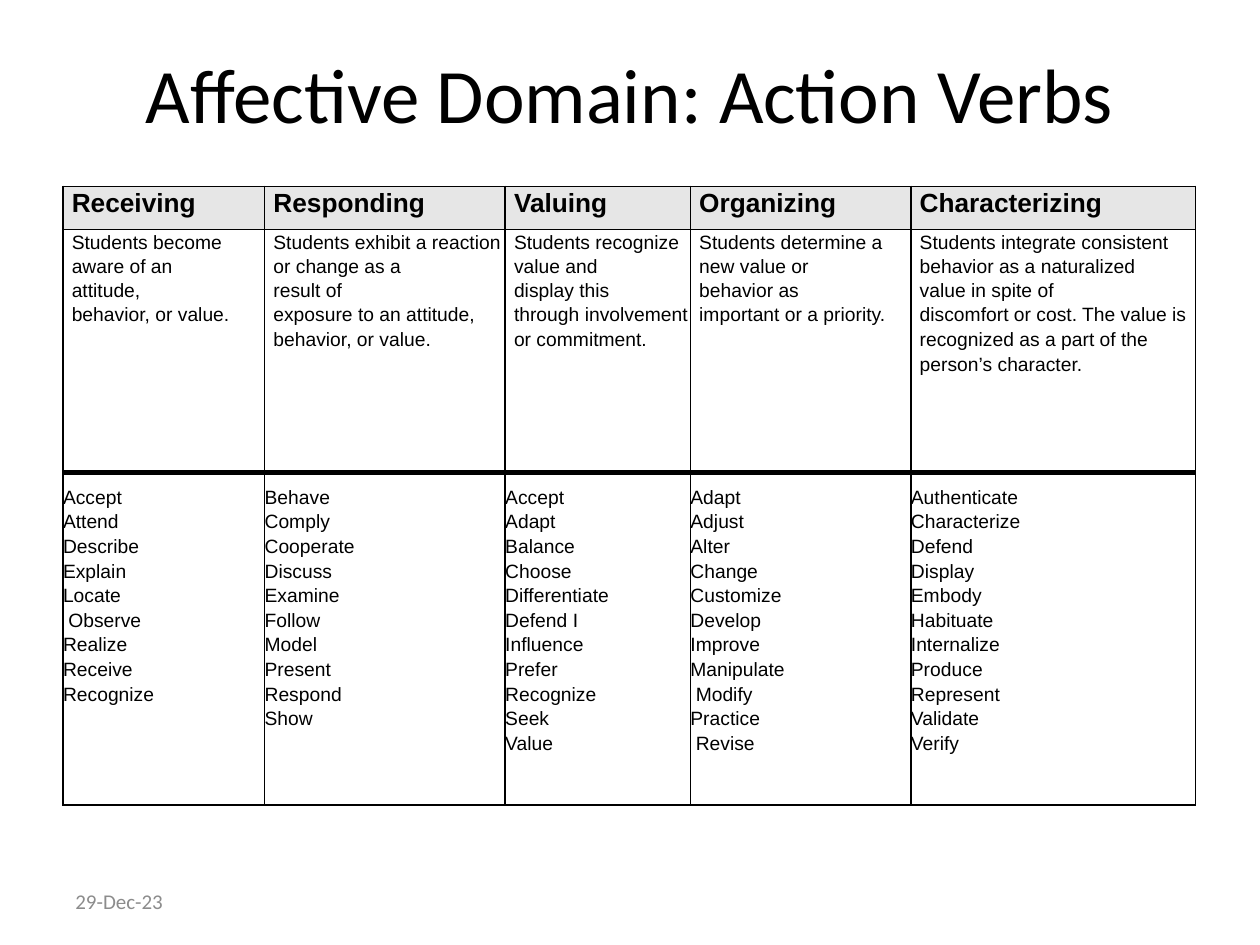
from lxml import etree
from pptx import Presentation
from pptx import util as u
from pptx.dml import color
from pptx.enum import text
from pptx.oxml import ns

HUES = {"ink": "000000", "head": "E6E6E6", "date": "8C8C8C"}
TITLE = {"name": "Calibri", "size": u.Pt(44)}
DATE = {"name": "Calibri", "size": u.Pt(12)}
HEAD = {"name": "Arial", "size": u.Pt(15), "bold": True}
BODY = {"name": "Arial", "size": u.Pt(11), "bold": False}
INSET = 0.07
LEAD = [u.Pt(13.8), u.Pt(13.5), 1.15]
WIDTHS = [1.6, 1.91, 1.47, 1.75, 2.26]
HEIGHTS = [0.34, 1.93, 2.64]

LEVELS = [
    ("Receiving",
     ["Students become aware of an", "attitude,", "behavior, or value."],
     ["Accept", "Attend", "Describe", "Explain", "Locate", " Observe",
      "Realize", "Receive", "Recognize"]),
    ("Responding",
     ["Students exhibit a reaction or change as a", "result of",
      "exposure to an attitude, behavior, or value."],
     ["Behave", "Comply", "Cooperate", "Discuss", "Examine", "Follow",
      "Model", "Present", "Respond", "Show"]),
    ("Valuing",
     ["Students recognize value and", "display this",
      "through involvement or commitment."],
     ["Accept", "Adapt", "Balance", "Choose", "Differentiate", "Defend I",
      "Influence", "Prefer", "Recognize", "Seek", "Value"]),
    ("Organizing",
     ["Students determine a new value or", "behavior as",
      "important or a priority."],
     ["Adapt", "Adjust", "Alter", "Change", "Customize", "Develop",
      "Improve", "Manipulate", " Modify", "Practice", " Revise"]),
    ("Characterizing",
     ["Students integrate consistent behavior as a naturalized",
      "value in spite of",
      "discomfort or cost. The value is recognized as a part of the "
      "person’s character."],
     ["Authenticate", "Characterize", "Defend", "Display", "Embody",
      "Habituate", "Internalize", "Produce", "Represent", "Validate",
      "Verify"]),
]


def apply(item, form):
    for key, val in form.items():
        setattr(item, key, val)


def write(frame, lines, font, hue="ink", leads=None):
    for i, line in enumerate(lines):
        para = frame.paragraphs[0] if i == 0 else frame.add_paragraph()
        if leads:
            para.line_spacing = leads[i]
        run = para.add_run()
        run.text = line
        apply(run.font, font)
        run.font.color.rgb = color.RGBColor.from_string(HUES[hue])
    return frame


def edge(cell, sides):
    props = cell._tc.get_or_add_tcPr()
    for side, width in sides.items():
        line = etree.SubElement(props, ns.qn("a:ln" + side), w=str(u.Pt(width)))
        fill = etree.SubElement(line, ns.qn("a:solidFill"))
        etree.SubElement(fill, ns.qn("a:srgbClr"), val=HUES["ink"])


def add_title(slide, box):
    title = slide.shapes.title
    apply(title, box)
    frame = write(title.text_frame, ["Affective Domain: Action Verbs"], TITLE)
    frame.vertical_anchor = text.MSO_ANCHOR.MIDDLE
    frame.paragraphs[0].alignment = text.PP_ALIGN.CENTER


def add_date(slide, box):
    shape = slide.shapes.add_textbox(**box)
    frame = write(shape.text_frame, ["29-Dec-23"], DATE, "date")
    apply(frame, {"word_wrap": True,
                  "vertical_anchor": text.MSO_ANCHOR.MIDDLE})


def add_grid(slide, box):
    grid = slide.shapes.add_table(len(HEIGHTS), len(LEVELS), **box).table
    apply(grid, {"first_row": False, "horz_banding": False})
    for row, high in zip(grid.rows, HEIGHTS):
        row.height = u.Inches(high)
    for c, (name, about, verbs) in enumerate(LEVELS):
        grid.columns[c].width = u.Inches(WIDTHS[c])
        parts = [
            ([name], HEAD, [u.Pt(18.2)], INSET, 0, 1, 1),
            (about, BODY, LEAD, INSET, 0, 1, 3),
            (verbs, BODY, [1.15] * len(verbs), 0, 0.09, 3, 1),
        ]
        for r, (lines, font, leads, left, top, over, under) in enumerate(parts):
            cell = grid.cell(r, c)
            apply(cell, {"margin_left": u.Inches(left),
                         "margin_top": u.Inches(top),
                         "margin_right": 0, "margin_bottom": 0})
            edge(cell, {"L": 1, "R": 1, "T": over, "B": under})
            if r == 0:
                cell.fill.solid()
                cell.fill.fore_color.rgb = color.RGBColor.from_string(HUES["head"])
            else:
                cell.fill.background()
            write(cell.text_frame, lines, font, leads=leads)


def area(*sizes):
    return dict(zip(("left", "top", "width", "height"), map(u.Inches, sizes)))


def main():
    deck = Presentation()
    apply(deck, {"slide_width": u.Inches(10), "slide_height": u.Inches(7.5)})
    slide = deck.slides.add_slide(deck.slide_layouts[5])
    add_title(slide, area(0.5, 0.3, 9, 0.87))
    add_date(slide, area(0.5, 6.95, 2.33, 0.4))
    add_grid(slide, area(0.5, 1.48, sum(WIDTHS), sum(HEIGHTS)))
    deck.save("out.pptx")


if __name__ == "__main__":
    main()
